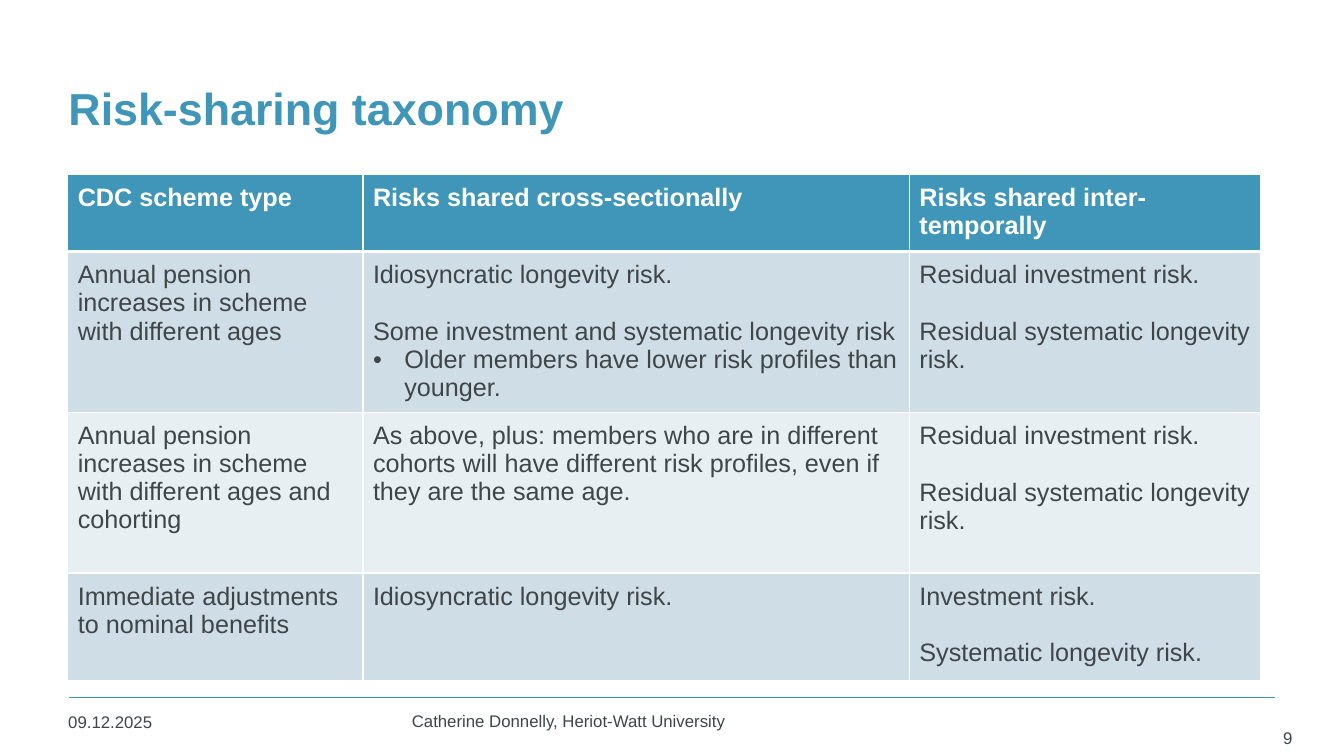
from lxml.etree import SubElement as Sub
from pptx import Presentation
from pptx.dml.color import RGBColor as Rgb
from pptx.enum.shapes import MSO_CONNECTOR as Conn
from pptx.enum.text import MSO_ANCHOR as Anchor, PP_ALIGN as Align
from pptx.oxml.ns import qn
from pptx.util import Cm, Pt

HUES = {"blue": "4096B8", "ink": "3F4548", "white": "FFFFFF",
        "dark": "CFDDE6", "light": "E8EFF3"}
FACE = "Arial"
GAP = Pt(20.5)
INDENT = Cm(0.79)

HEADS = ["CDC scheme type", "Risks shared cross-sectionally",
         "Risks shared inter-temporally"]
RESID = ["Residual investment risk.", "Residual systematic longevity risk."]
ROWS = [
    [["Annual pension increases in scheme with different ages"],
     ["Idiosyncratic longevity risk.",
      "Some investment and systematic longevity risk",
      "• Older members have lower risk profiles than younger."],
     RESID],
    [["Annual pension increases in scheme with different ages and cohorting"],
     ["As above, plus: members who are in different cohorts will have "
      "different risk profiles, even if they are the same age."],
     RESID],
    [["Immediate adjustments to nominal benefits"],
     ["Idiosyncratic longevity risk."],
     ["Investment risk.", "Systematic longevity risk."]],
]
WIDTHS = [7.44, 13.77, 8.84]
HEIGHTS = [1.94, 4.05, 4.05, 2.7]


def style(para, size, hue, bold=False, align=Align.LEFT):
    font = para.font
    font.name, font.size, font.bold = FACE, Pt(size), bold
    font.color.rgb = Rgb.from_string(HUES[hue])
    para.alignment = align


def bullet(para):
    props = para._p.get_or_add_pPr()
    props.set("marL", str(INDENT))
    props.set("indent", str(-INDENT))
    Sub(props, qn("a:buFont"), typeface=FACE)
    Sub(props, qn("a:buChar"), char="•")


def border(cell, base):
    props = cell._tc.get_or_add_tcPr()
    sides = {"lnL": 1, "lnR": 1, "lnT": 1, "lnB": base}
    for spot, (side, width) in enumerate(sides.items()):
        line = Sub(props, qn(f"a:{side}"), w=str(Pt(width)))
        fill = Sub(line, qn("a:solidFill"))
        Sub(fill, qn("a:srgbClr"), val=HUES["white"])
        props.insert(spot, line)


def fill_cell(cell, texts, back, hue, bold, base):
    cell.fill.solid()
    cell.fill.fore_color.rgb = Rgb.from_string(HUES[back])
    border(cell, base)
    cell.margin_left = cell.margin_right = Cm(0.25)
    cell.margin_top = cell.margin_bottom = Cm(0.23)
    frame = cell.text_frame
    for i, text in enumerate(texts):
        para = frame.add_paragraph() if i else frame.paragraphs[0]
        para.text = text.removeprefix("• ")
        style(para, 18, hue, bold)
        if text.startswith("• "):
            bullet(para)
        elif i:
            para.space_before = GAP


def add_title(slide, left, top, width, height):
    title = slide.shapes.title
    title.left, title.top = Cm(left), Cm(top)
    title.width, title.height = Cm(width), Cm(height)
    title.text = "Risk-sharing taxonomy"
    title.text_frame.vertical_anchor = Anchor.MIDDLE
    style(title.text_frame.paragraphs[0], 32, "blue", True)


def add_grid(slide, left, top):
    table = slide.shapes.add_table(
        len(HEIGHTS), len(WIDTHS), Cm(left), Cm(top),
        Cm(sum(WIDTHS)), Cm(sum(HEIGHTS))).table
    for col, width in zip(table.columns, WIDTHS):
        col.width = Cm(width)
    for row, height in zip(table.rows, HEIGHTS):
        row.height = Cm(height)
    for c, head in enumerate(HEADS):
        fill_cell(table.cell(0, c), [head], "blue", "white", True, 3)
    for r, row in enumerate(ROWS, 1):
        back = "dark" if r % 2 else "light"
        for c, texts in enumerate(row):
            fill_cell(table.cell(r, c), texts, back, "ink", False, 1)


def add_note(slide, text, left, top, width, align=Align.LEFT):
    box = slide.shapes.add_textbox(Cm(left), Cm(top), Cm(width), Cm(0.92))
    box.text_frame.word_wrap = True
    para = box.text_frame.paragraphs[0]
    para.text = text
    style(para, 12, "ink", align=align)


def add_foot(slide, left, top):
    rule = slide.shapes.add_connector(
        Conn.STRAIGHT, Cm(left + 0.26), Cm(top), Cm(left + 30.66), Cm(top))
    rule.line.color.rgb = Rgb.from_string(HUES["blue"])
    rule.line.width = Pt(1)
    Sub(rule._element.spPr, qn("a:effectLst"))
    add_note(slide, "09.12.2025", left, top + 0.23, 7.47)
    add_note(slide, "Catherine Donnelly, Heriot-Watt University",
             left + 8.66, top + 0.2, 8.79)
    add_note(slide, "9", left + 28.96, top + 0.63, 2.39, Align.RIGHT)


def main():
    deck = Presentation()
    deck.slide_width, deck.slide_height = Cm(33.87), Cm(19.05)
    slide = deck.slides.add_slide(deck.slide_layouts[5])
    add_title(slide, 1.47, 1.12, 30.71, 3.18)
    add_grid(slide, 1.71, 4.4)
    add_foot(slide, 1.47, 17.58)
    deck.save("out.pptx")


if __name__ == "__main__":
    main()
